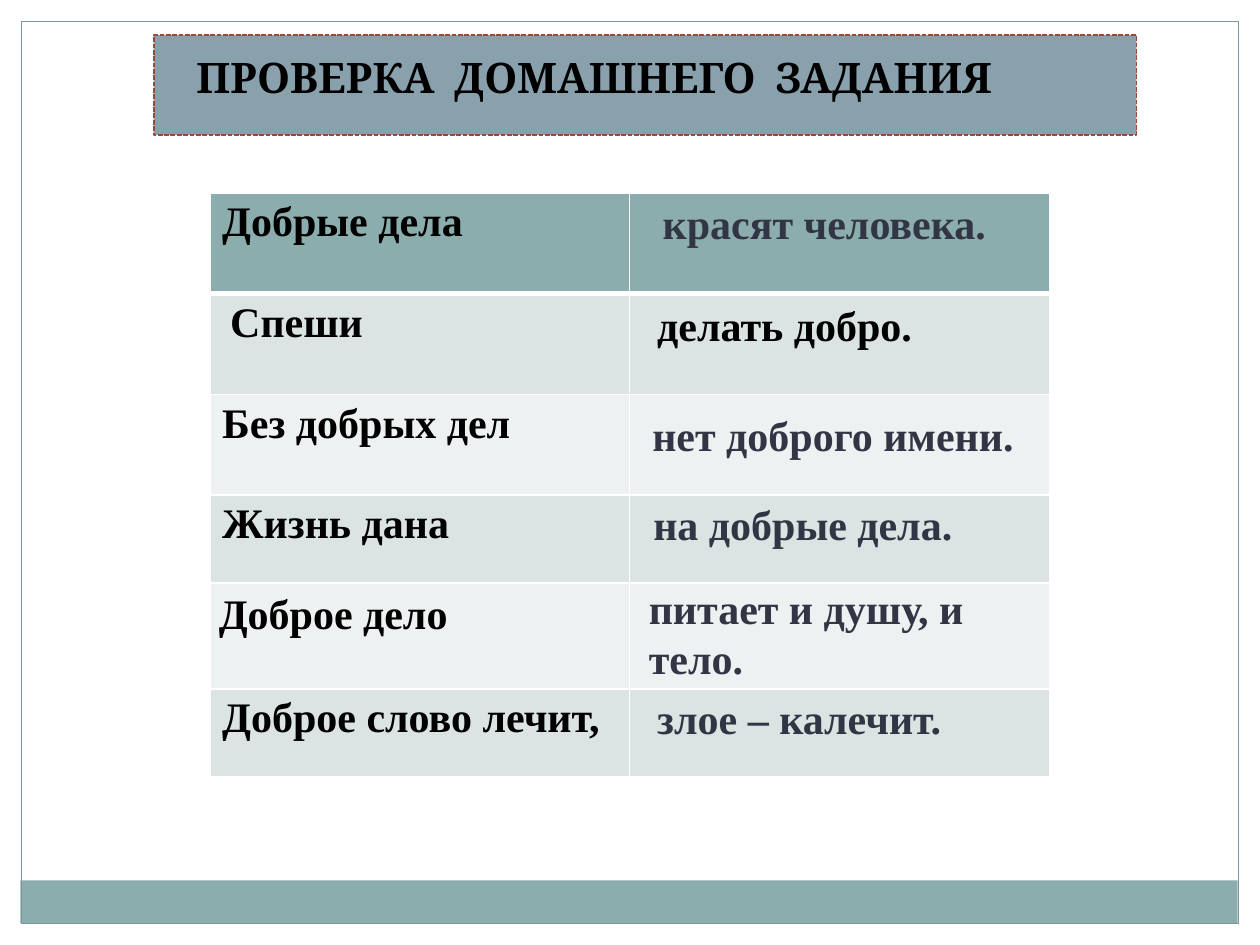
from dataclasses import dataclass

from lxml.etree import SubElement
from pptx import Presentation
from pptx.dml.color import RGBColor
from pptx.enum.dml import MSO_LINE
from pptx.enum.shapes import MSO_SHAPE
from pptx.oxml.ns import qn
from pptx.slide import Slide
from pptx.table import _Cell
from pptx.text.text import _Run
from pptx.util import Cm, Pt

WHITE = RGBColor(0xFF, 0xFF, 0xFF)
BLACK = RGBColor(0x00, 0x00, 0x00)
SLATE = RGBColor(0x32, 0x35, 0x43)
TEAL = RGBColor(0x8C, 0xAD, 0xAE)
TEAL_LINE = RGBColor(0x7C, 0x99, 0x9A)
BANNER = RGBColor(0x88, 0xA1, 0xAD)
RUST = RGBColor(0x9B, 0x49, 0x36)
DARK_BAND = RGBColor(0xDB, 0xE3, 0xE3)
LIGHT_BAND = RGBColor(0xEE, 0xF1, 0xF2)

BODY_FONT = "Times New Roman"
TITLE_FONT = "Cambria"
TITLE_WORDS = ("ПРОВЕРКА", "ДОМАШНЕГО", "ЗАДАНИЯ")
WORD_SPACING = "600"


@dataclass(frozen=True)
class Panel:
    left: float
    top: float
    width: float
    height: float
    fill: RGBColor | None = None
    line: RGBColor | None = None
    line_width: float = 0.75
    dash: MSO_LINE | None = None


@dataclass(frozen=True)
class Beginning:
    text: str
    height: float
    margin_left: float = 0.25
    margin_top: float = 0.13


@dataclass(frozen=True)
class Ending:
    text: str
    left: float
    top: float
    width: float
    height: float = 1.27
    color: RGBColor = SLATE


PANELS = (
    Panel(0.41, 17.75, 24.54, 0.86, fill=TEAL),
    Panel(0.43, 0.43, 24.54, 18.19, line=TEAL_LINE),
    Panel(3.1, 0.71, 19.81, 2.01, BANNER, RUST, 0.9, MSO_LINE.SQUARE_DOT),
)

BEGINNINGS = (
    Beginning("Добрые дела", 2.03),
    Beginning("Спеши", 2.03, margin_left=0.41),
    Beginning("Без добрых дел", 2.03),
    Beginning("Жизнь дана", 1.78),
    Beginning("Доброе дело", 2.13, 0.18, 0.18),
    Beginning("Доброе слово лечит,", 1.78),
)

ENDINGS = (
    Ending("красят человека.", 13.11, 3.86, 7.21),
    Ending("делать добро.", 13, 5.92, 7.32, color=BLACK),
    Ending("нет доброго имени.", 12.9, 8.13, 8),
    Ending("на добрые дела.", 12.92, 9.93, 7.6),
    Ending("питает и душу, и тело.", 12.83, 11.61, 7.39, 2.29),
    Ending("злое – калечит.", 13, 13.84, 7.49),
)


def format_run(run: _Run, font: str, color: RGBColor) -> None:
    """Apply the bold 24 point lettering."""
    run.font.name = font
    run.font.size = Pt(24)
    run.font.bold = True
    run.font.color.rgb = color


def add_panel(slide: Slide, panel: Panel) -> None:
    """Draw a rectangle with an optional fill and outline."""
    shape = slide.shapes.add_shape(
        MSO_SHAPE.RECTANGLE, Cm(panel.left), Cm(panel.top), Cm(panel.width), Cm(panel.height)
    )
    shape.shadow.inherit = False
    if panel.fill is None:
        shape.fill.background()
    else:
        shape.fill.solid()
        shape.fill.fore_color.rgb = panel.fill
    if panel.line is None:
        shape.line.fill.background()
    else:
        shape.line.color.rgb = panel.line
        shape.line.width = Pt(panel.line_width)
        if panel.dash is not None:
            shape.line.dash_style = panel.dash


def add_title(slide: Slide) -> None:
    """Write the heading with widened gaps between its words."""
    shape = slide.shapes.add_textbox(Cm(3.71), Cm(0.91), Cm(21.41), Cm(1.27))
    shape.text_frame.word_wrap = True
    paragraph = shape.text_frame.paragraphs[0]
    for index, word in enumerate(TITLE_WORDS):
        if index:
            gap = paragraph.add_run()
            gap.text = " "
            format_run(gap, TITLE_FONT, BLACK)
            gap.font._element.set("spc", WORD_SPACING)
        run = paragraph.add_run()
        run.text = word
        format_run(run, TITLE_FONT, BLACK)


def set_borders(cell: _Cell, top: float, bottom: float) -> None:
    """Give a cell white borders of the stated point widths."""
    properties = cell._tc.get_or_add_tcPr()
    widths = {"a:lnL": 1, "a:lnR": 1, "a:lnT": top, "a:lnB": bottom}
    for position, (tag, width) in enumerate(widths.items()):
        line = SubElement(properties, qn(tag), w=str(Pt(width)))
        fill = SubElement(line, qn("a:solidFill"))
        SubElement(fill, qn("a:srgbClr"), val=str(WHITE))
        properties.insert(position, line)


def add_proverb_table(slide: Slide) -> None:
    """Build the table of proverb beginnings with an open second column."""
    total_height = sum(beginning.height for beginning in BEGINNINGS)
    table = slide.shapes.add_table(
        len(BEGINNINGS), 2, Cm(4.23), Cm(3.89), Cm(16.93), Cm(total_height)
    ).table
    for index, beginning in enumerate(BEGINNINGS):
        row = table.rows[index]
        row.height = Cm(beginning.height)
        band = DARK_BAND if index % 2 else LIGHT_BAND
        for cell in row.cells:
            cell.fill.solid()
            cell.fill.fore_color.rgb = band if index else TEAL
            set_borders(cell, 3 if index == 1 else 1, 3 if index == 0 else 1)
        cell = row.cells[0]
        cell.margin_left = Cm(beginning.margin_left)
        cell.margin_top = Cm(beginning.margin_top)
        cell.text_frame.text = beginning.text
        format_run(cell.text_frame.paragraphs[0].runs[0], BODY_FONT, BLACK)


def add_ending(slide: Slide, ending: Ending) -> None:
    """Place the ending of a proverb over the second column."""
    shape = slide.shapes.add_textbox(
        Cm(ending.left), Cm(ending.top), Cm(ending.width), Cm(ending.height)
    )
    shape.text_frame.word_wrap = True
    shape.text_frame.text = ending.text
    format_run(shape.text_frame.paragraphs[0].runs[0], BODY_FONT, ending.color)


def main() -> None:
    """Build and save the homework check slide."""
    presentation = Presentation()
    presentation.slide_width = Cm(25.4)
    presentation.slide_height = Cm(19.05)
    slide = presentation.slides.add_slide(presentation.slide_layouts[6])
    for panel in PANELS:
        add_panel(slide, panel)
    add_title(slide)
    add_proverb_table(slide)
    for ending in ENDINGS:
        add_ending(slide, ending)
    presentation.save("out.pptx")


if __name__ == "__main__":
    main()
